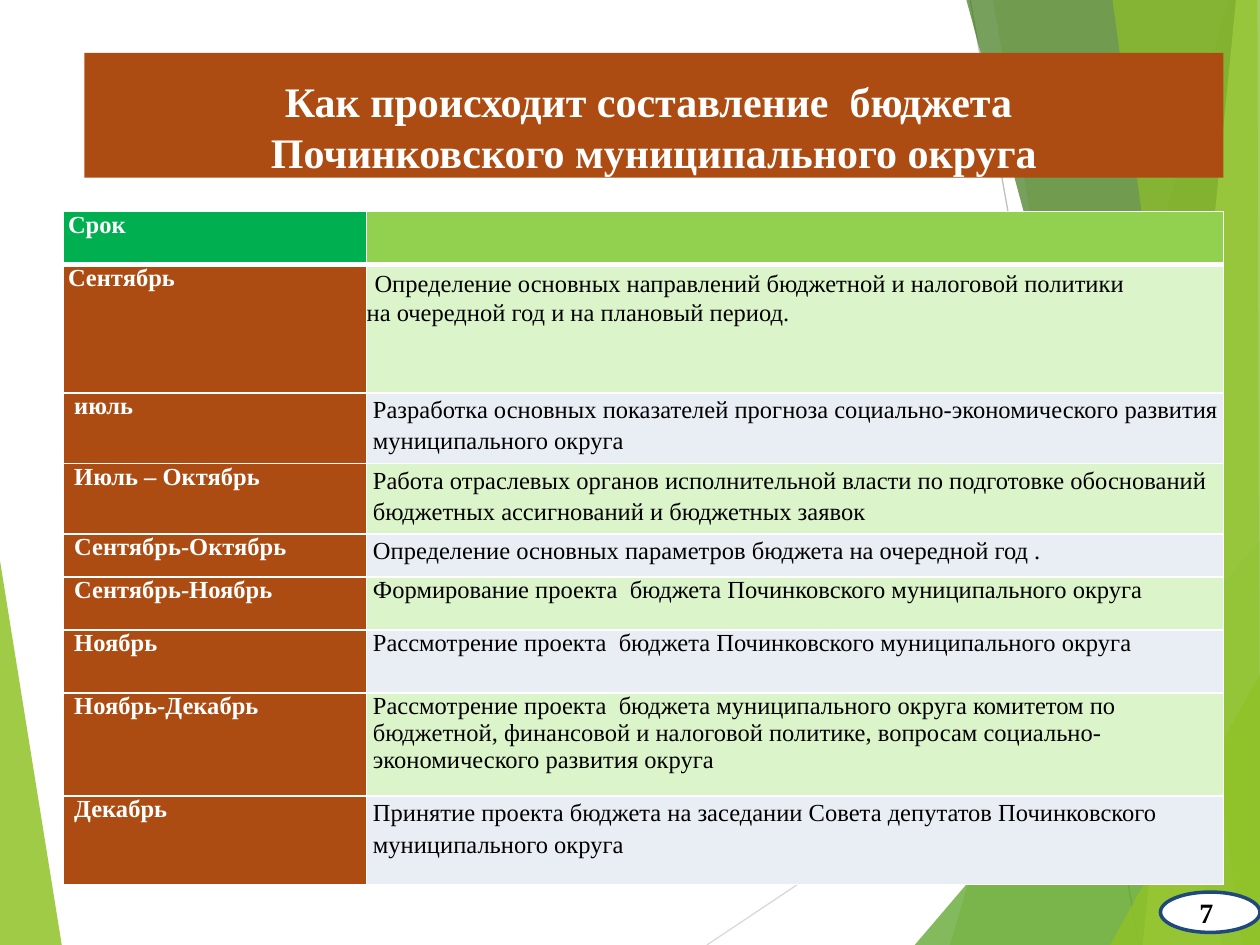
from lxml import etree
from pptx import Presentation
from pptx.dml.color import RGBColor
from pptx.enum.shapes import MSO_CONNECTOR, MSO_SHAPE
from pptx.enum.text import MSO_ANCHOR, PP_ALIGN
from pptx.oxml.ns import qn
from pptx.util import Inches, Pt

FONT = "Times New Roman"
COLORS = {
    "white": "FFFFFF", "black": "000000", "brown": "AD4C12", "navy": "1F487C",
    "header": "00B050", "header_light": "92D050",
    "mint": "DBF4CA", "pale": "E9EDF4",
    "lime": "90C226", "green": "54A021", "dark": "3F7819", "light": "C0E474",
    "gray": "BFBFBF", "light_gray": "D9D9D9",
}
TITLE = ["Как происходит составление  бюджета ",
         "Починковского муниципального округа"]
PAGE = "7"

LINES = [
    ((5.61, 7.5), (10, 4.57), "light_gray"),
    ((7.7, 0), (9.04, 7.5), "gray"),
]
FACETS = [
    ("lime", 85, [(0, 4.45), (0.49, 7.5), (0, 7.5)]),
    ("lime", 30, [(9.75, 0), (7.54, 7.5), (10, 7.5), (10, 0)]),
    ("lime", 20, [(7.88, 0), (9.19, 7.5), (10, 7.5), (10, 0)]),
    ("green", 72, [(7.26, 7.5), (10, 4.29), (10, 7.5)]),
    ("dark", 70, [(7.67, 0), (9.7, 7.5), (10, 7.5), (10, 0)]),
    ("light", 70, [(9.81, 0), (9.07, 7.5), (10, 7.5), (10, 0)]),
    ("lime", 65, [(8.83, 0), (9.86, 7.5), (10, 7.5), (9.98, 0)]),
    ("lime", 80, [(8.81, 7.5), (10, 5.35), (10, 7.5)]),
]

COL_WIDTHS = [2.41, 6.8]
STAGES = [
    (0.42, "Срок", [], 1),
    (1.02, "Сентябрь",
     [" Определение основных направлений бюджетной и налоговой политики",
      "на очередной год и на плановый период."], 1),
    (0.56, " июль",
     ["Разработка основных показателей прогноза социально-экономического "
      "развития муниципального округа"], 1.15),
    (0.56, " Июль – Октябрь",
     ["Работа отраслевых органов исполнительной власти по подготовке "
      "обоснований бюджетных ассигнований и бюджетных заявок"], 1.15),
    (0.34, " Сентябрь-Октябрь",
     ["Определение основных параметров бюджета на очередной год ."], 1.15),
    (0.42, " Сентябрь-Ноябрь",
     ["Формирование проекта  бюджета Починковского муниципального округа"], 1),
    (0.5, " Ноябрь",
     ["Рассмотрение проекта  бюджета Починковского муниципального округа"], 1),
    (0.82, " Ноябрь-Декабрь",
     ["Рассмотрение проекта  бюджета муниципального округа комитетом по "
      "бюджетной, финансовой и налоговой политике, вопросам "
      "социально-экономического развития округа"], 1),
    (0.7, " Декабрь",
     ["Принятие проекта бюджета на заседании Совета депутатов Починковского "
      "муниципального округа"], 1.15),
]


def rgb(name):
    return RGBColor.from_string(COLORS[name])


def paint(fill, color):
    fill.solid()
    fill.fore_color.rgb = rgb(color)


def set_margins(box, left=0, top=0):
    box.margin_left, box.margin_top = Inches(left), Inches(top)
    box.margin_right = box.margin_bottom = 0


def write(tf, lines, size, color, bold, spacing=1, align=PP_ALIGN.LEFT):
    for i, line in enumerate(lines):
        p = tf.add_paragraph() if i else tf.paragraphs[0]
        p.text = line
        p.alignment, p.line_spacing = align, spacing
        p.font.name, p.font.size, p.font.bold = FONT, Pt(size), bold
        p.font.color.rgb = rgb(color)


def add_line(slide, start, end, color):
    ends = [Inches(v) for v in start + end]
    sp = slide.shapes.add_connector(MSO_CONNECTOR.STRAIGHT, *ends)
    sp.line.color.rgb = rgb(color)
    sp.line.width = Pt(0.75)
    etree.SubElement(sp.element.spPr, qn("a:effectLst"))


def add_facet(slide, color, opacity, points):
    start, *rest = [(Inches(x), Inches(y)) for x, y in points]
    builder = slide.shapes.build_freeform(*start)
    builder.add_line_segments(rest, close=True)
    sp = builder.convert_to_shape()
    sp.shadow.inherit = False
    sp.line.fill.background()
    paint(sp.fill, color)
    clr = sp.element.spPr.find(qn("a:solidFill"))[0]
    etree.SubElement(clr, qn("a:alpha"), val=str(opacity * 1000))


def add_shape(slide, kind, box, color):
    sp = slide.shapes.add_shape(kind, *[Inches(v) for v in box])
    sp.shadow.inherit = False
    paint(sp.fill, color)
    sp.line.fill.background()
    return sp


def set_borders(cell, top, bottom):
    tc_pr = cell._tc.get_or_add_tcPr()
    for side, width in (("L", 1), ("R", 1), ("T", top), ("B", bottom)):
        ln = etree.SubElement(tc_pr, qn("a:ln" + side), w=str(Pt(width)))
        fill = etree.SubElement(ln, qn("a:solidFill"))
        etree.SubElement(fill, qn("a:srgbClr"), val=COLORS["white"])


def add_schedule(slide):
    size = [Inches(sum(COL_WIDTHS)), Inches(sum(s[0] for s in STAGES))]
    table = slide.shapes.add_table(len(STAGES), 2, Inches(0.5), Inches(1.68), *size).table
    for col, width in zip(table.columns, COL_WIDTHS):
        col.width = Inches(width)
    for i, (height, term, task, spacing) in enumerate(STAGES):
        table.rows[i].height = Inches(height)
        if i == 0:
            fills = "header", "header_light"
        else:
            fills = "brown", "mint" if i % 2 else "pale"
        left, right = table.cell(i, 0), table.cell(i, 1)
        for cell, fill, margin in zip((left, right), fills, (0.04, 0.05 if i > 1 else 0)):
            set_margins(cell, margin)
            set_borders(cell, 3 if i == 1 else 1, 3 if i == 0 else 1)
            paint(cell.fill, fill)
        write(left.text_frame, [term], 14, "white", True)
        write(right.text_frame, task, 14, "black", False, spacing)
    p = table.cell(1, 1).text_frame.paragraphs[0]
    p.text = " "
    p.runs[0].font.size = Pt(18)
    p.add_run().text = STAGES[1][2][0].lstrip()


def main():
    prs = Presentation()
    prs.slide_width, prs.slide_height = Inches(10), Inches(7.5)
    slide = prs.slides.add_slide(prs.slide_layouts[6])

    for line in LINES:
        add_line(slide, *line)
    for facet in FACETS:
        add_facet(slide, *facet)

    banner = add_shape(slide, MSO_SHAPE.RECTANGLE, (0.67, 0.42, 9.04, 0.99), "brown")
    tf = banner.text_frame
    tf.vertical_anchor = MSO_ANCHOR.TOP
    set_margins(tf, top=0.18)
    write(tf, TITLE, 24, "white", True, align=PP_ALIGN.CENTER)

    badge = add_shape(slide, MSO_SHAPE.OVAL, (9.21, 7.08, 0.79, 0.32), "white")
    badge.line.color.rgb = rgb("navy")
    badge.line.width = Pt(2)
    number = slide.shapes.add_textbox(*[Inches(v) for v in (9.51, 7.11, 0.19, 0.27)])
    tf = number.text_frame
    tf.word_wrap = True
    set_margins(tf, 0.01)
    write(tf, [PAGE], 16, "black", True)

    add_schedule(slide)
    prs.save("out.pptx")


if __name__ == "__main__":
    main()
